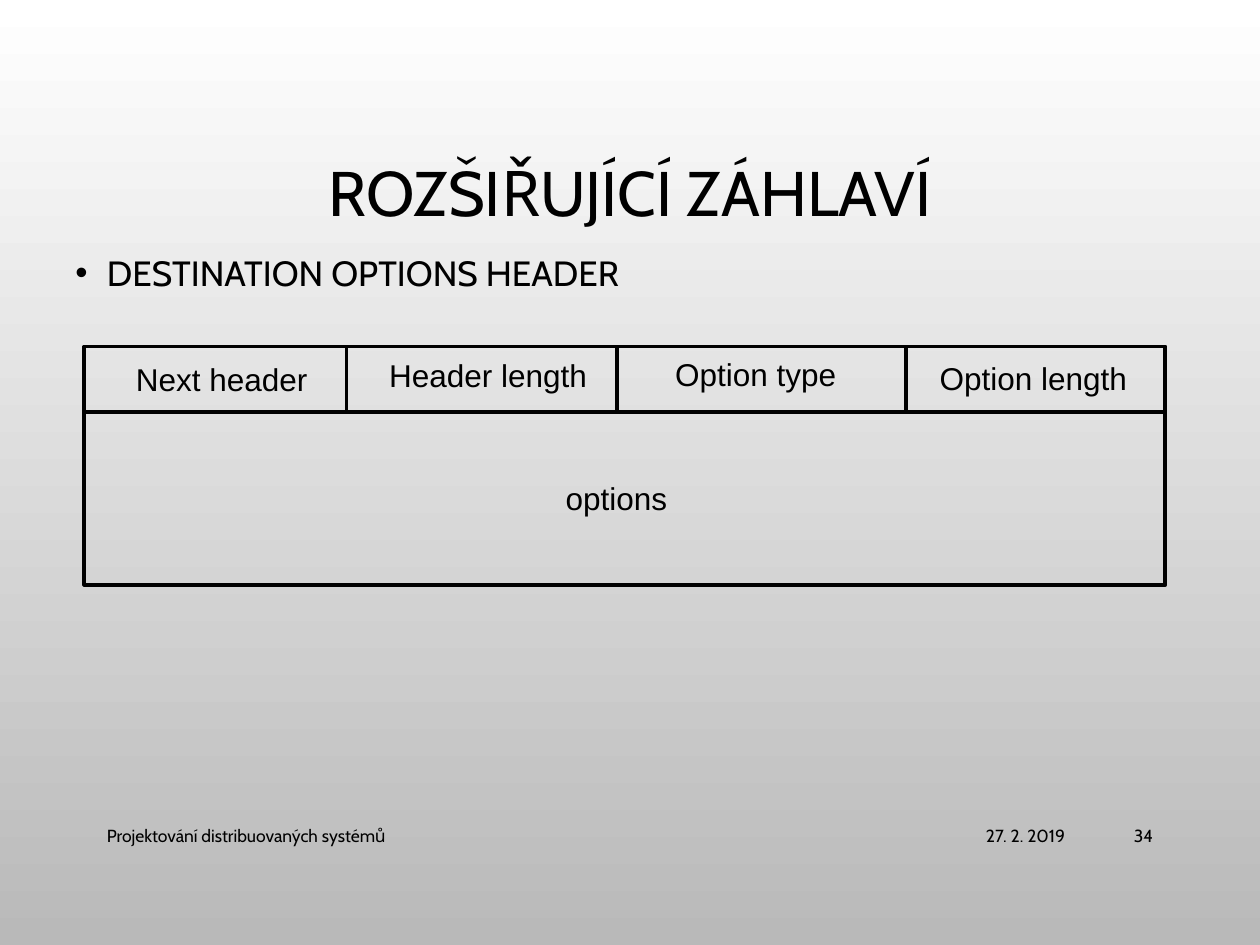
from dataclasses import dataclass

from lxml import etree
from pptx import Presentation, util as u
from pptx.dml.color import RGBColor
from pptx.enum import shapes, text
from pptx.oxml import ns


@dataclass(frozen=True)
class Theme:
    ink: RGBColor = RGBColor(0, 0, 0)
    top: RGBColor = RGBColor(255, 255, 255)
    bottom: RGBColor = RGBColor(0xB9, 0xB9, 0xB9)
    font: str = "Cabin"
    diagram_font: str = "Arial"
    title: int = 36
    body: int = 20
    label: int = 18
    footer: int = 10
    line: float = 2.25


THEME = Theme()
ALIGN = text.PP_ALIGN
WIDTH, HEIGHT = 10, 7.5

TITLE = "ROZŠIŘUJÍCÍ ZÁHLAVÍ"
BULLET = "DESTINATION OPTIONS HEADER"
FOOTERS = [
    ("27. 2. 2019", 6.3, 2.25, ALIGN.RIGHT),
    ("Projektování distribuovaných systémů", 0.75, 5.47, ALIGN.LEFT),
    ("34", 8.62, 0.63, ALIGN.RIGHT),
]
FOOTER_TOP, ROW_HEIGHT = 6.43, 0.4

FRAME_LEFT, FRAME_TOP, FRAME_WIDTH, FRAME_HEIGHT = 0.67, 2.75, 8.58, 1.89
HEADER_HEIGHT = 0.52
COLUMN_WIDTHS = [2.08, 2.15, 2.29]
LABELS = [
    ("Next header", 0.98, 2.81, 1.58),
    ("Header length", 2.99, 2.78, 1.79),
    ("Option type", 5.26, 2.77, 1.49),
    ("Option length", 7.36, 2.8, 1.7),
    ("options", 4.39, 3.75, 1.02),
]


def add_text(slide, content, box, size, font=THEME.font, align=ALIGN.LEFT,
             anchor=text.MSO_ANCHOR.MIDDLE, wrap=True):
    shape = slide.shapes.add_textbox(*map(u.Inches, box))
    frame = shape.text_frame
    frame.text = content
    frame.word_wrap = wrap
    frame.vertical_anchor = anchor
    paragraph = frame.paragraphs[0]
    paragraph.alignment = align
    run_font = paragraph.runs[0].font
    run_font.name, run_font.size = font, u.Pt(size)
    run_font.color.rgb = THEME.ink
    return shape


def add_line(slide, *ends):
    connector = slide.shapes.add_connector(
        shapes.MSO_CONNECTOR.STRAIGHT, *map(u.Inches, ends))
    connector.line.color.rgb = THEME.ink
    connector.line.width = u.Pt(THEME.line)
    properties = connector.element.find(ns.qn("p:spPr"))
    etree.SubElement(properties, ns.qn("a:effectLst"))


def add_background(slide):
    fill = slide.background.fill
    fill.gradient()
    fill.gradient_angle = 270
    for stop, color in zip(fill.gradient_stops, (THEME.top, THEME.bottom)):
        stop.color.rgb = color


def add_heading(slide):
    title = add_text(slide, TITLE, (0.75, 0.68, 8.5, 1.75), THEME.title,
                     align=ALIGN.CENTER)
    title.text_frame.paragraphs[0].line_spacing = 0.9

    body = add_text(slide, BULLET, (0.5, 1.88, 9, 0.54), THEME.body,
                    anchor=text.MSO_ANCHOR.TOP)
    paragraph = body.text_frame.paragraphs[0]
    paragraph.line_spacing = 1.2
    paragraph.space_before = u.Pt(10)
    properties = paragraph._p.get_or_add_pPr()
    properties.set("marL", str(u.Inches(0.25)))
    properties.set("indent", str(u.Inches(-0.25)))
    etree.SubElement(properties, ns.qn("a:buFont"), typeface=THEME.diagram_font)
    etree.SubElement(properties, ns.qn("a:buChar"), char="•")


def add_packet(slide):
    frame = slide.shapes.add_shape(
        shapes.MSO_SHAPE.RECTANGLE,
        *map(u.Inches, (FRAME_LEFT, FRAME_TOP, FRAME_WIDTH, FRAME_HEIGHT)))
    frame.shadow.inherit = False
    frame.fill.background()
    frame.line.color.rgb = THEME.ink
    frame.line.width = u.Pt(THEME.line)

    divider = FRAME_TOP + HEADER_HEIGHT
    add_line(slide, FRAME_LEFT, divider, FRAME_LEFT + FRAME_WIDTH, divider)
    edge = FRAME_LEFT
    for width in COLUMN_WIDTHS:
        edge += width
        add_line(slide, edge, FRAME_TOP, edge, divider)

    for content, left, top, width in LABELS:
        label = add_text(slide, content, (left, top, width, ROW_HEIGHT),
                         THEME.label, THEME.diagram_font,
                         anchor=text.MSO_ANCHOR.TOP, wrap=False)
        label.text_frame.auto_size = text.MSO_AUTO_SIZE.SHAPE_TO_FIT_TEXT


def main():
    presentation = Presentation()
    presentation.slide_width = u.Inches(WIDTH)
    presentation.slide_height = u.Inches(HEIGHT)
    slide = presentation.slides.add_slide(presentation.slide_layouts[6])
    add_background(slide)
    add_heading(slide)
    for content, left, width, align in FOOTERS:
        add_text(slide, content, (left, FOOTER_TOP, width, ROW_HEIGHT),
                 THEME.footer, align=align)
    add_packet(slide)
    presentation.save("out.pptx")


if __name__ == "__main__":
    main()
